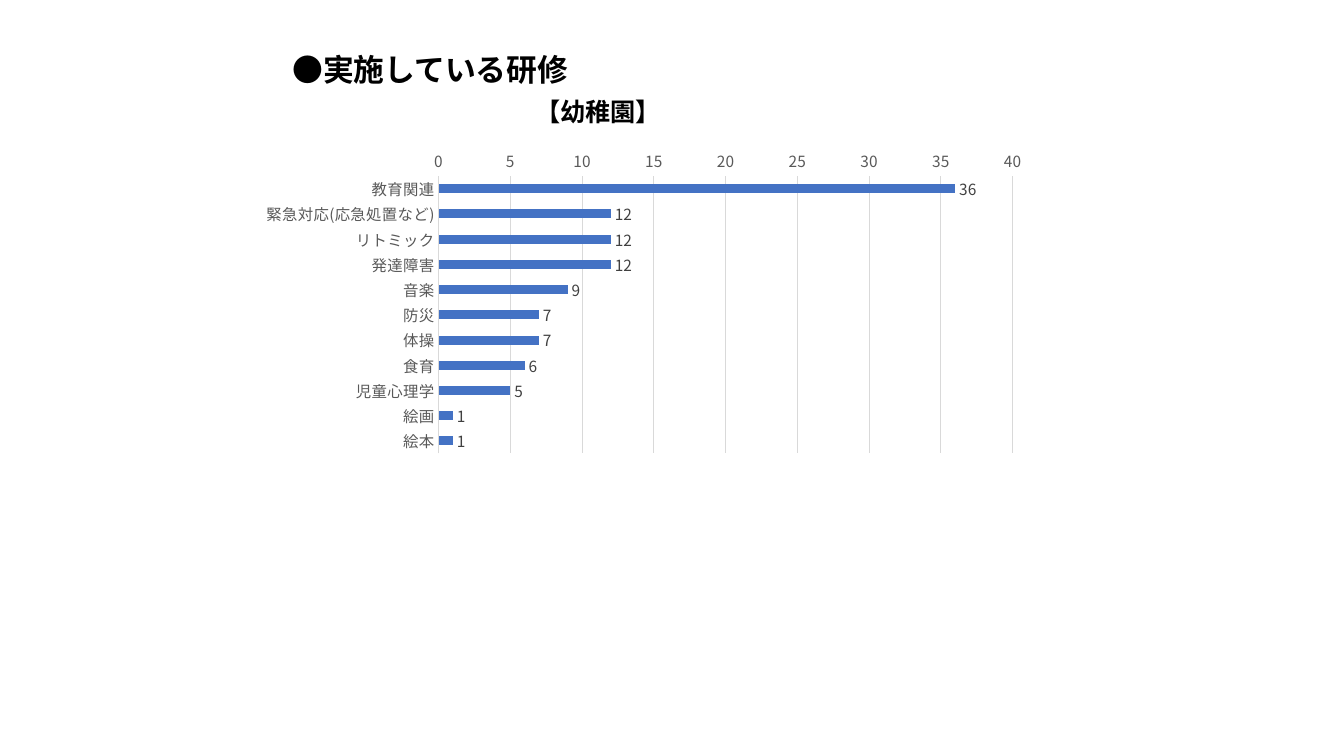
from lxml import etree
from pptx import Presentation, util as u
from pptx.chart.data import CategoryChartData
from pptx.dml.color import RGBColor
from pptx.enum import chart as ch, text
from pptx.oxml.ns import qn

# Content
HEADING = "●実施している研修"
SUBHEADING = "【幼稚園】"
TRAININGS = [
    ("教育関連", 36),
    ("緊急対応(応急処置など)", 12),
    ("リトミック", 12),
    ("発達障害", 12),
    ("音楽", 9),
    ("防災", 7),
    ("体操", 7),
    ("食育", 6),
    ("児童心理学", 5),
    ("絵画", 1),
    ("絵本", 1),
]

# Positions: left, top, width, height
HEADING_BOX = (2.8, 0.45, 10.5, 0.47)
SUBHEADING_BOX = (5.21, 0.91, 1.46, 0.4)
CHART_BOX = (2.41, 0.78, 8.51, 4.12)
PLOT_SHARE = {"x": 0.228, "y": 0.235, "w": 0.669, "h": 0.668}


class Theme:
    font = "Noto Sans CJK JP"
    ink, axis_text, label_text = "000000", "595959", "404040"
    bar, rule = "4472C4", "D9D9D9"
    heading, subheading, chart, axis = 22, 18, 10, 11


def inches(box):
    return [u.Inches(length) for length in box]


def style_font(font, size, color, bold=False):
    values = {"name": Theme.font, "size": u.Pt(size), "bold": bold}
    for name, value in values.items():
        setattr(font, name, value)
    font.color.rgb = RGBColor.from_string(color)


def style_line(line, color):
    line.color.rgb = RGBColor.from_string(color)
    line.width = u.Pt(0.75)


def write_text(box, words, size):
    frame = box.text_frame
    frame.text = words
    values = {
        "word_wrap": True,
        "vertical_anchor": text.MSO_ANCHOR.TOP,
        "auto_size": text.MSO_AUTO_SIZE.SHAPE_TO_FIT_TEXT,
    }
    for name, value in values.items():
        setattr(frame, name, value)
    para = frame.paragraphs[0]
    para.alignment = text.PP_ALIGN.LEFT
    style_font(para.runs[0].font, size, Theme.ink, bold=True)


def add_east_asian_font(root):
    for latin in list(root.iter(qn("a:latin"))):
        east_asian = etree.Element(qn("a:ea"), typeface=Theme.font)
        latin.addnext(east_asian)


def place_plot(chart):
    area = chart.element.find(".//" + qn("c:plotArea"))
    for old in area.findall(qn("c:layout")):
        area.remove(old)
    layout = etree.Element(qn("c:layout"))
    manual = etree.SubElement(layout, qn("c:manualLayout"))
    settings = {"layoutTarget": "inner", "xMode": "edge", "yMode": "edge", **PLOT_SHARE}
    for name, value in settings.items():
        etree.SubElement(manual, qn("c:" + name), val=str(value))
    area.insert(0, layout)


def add_training_chart(page):
    data = CategoryChartData()
    data.categories = [name for name, _ in TRAININGS]
    data.add_series("Series 1", [count for _, count in TRAININGS])
    chart = page.shapes.add_chart(
        ch.XL_CHART_TYPE.BAR_CLUSTERED, *inches(CHART_BOX), data
    ).chart
    chart.has_legend = chart.has_title = False
    style_font(chart.font, Theme.chart, Theme.ink)

    # Axes: first category on top
    for axis in (chart.category_axis, chart.value_axis):
        axis.major_tick_mark = axis.minor_tick_mark = ch.XL_TICK_MARK.NONE
        style_font(axis.tick_labels.font, Theme.axis, Theme.axis_text)
    chart.category_axis.reverse_order = True
    chart.category_axis.has_major_gridlines = False
    style_line(chart.category_axis.format.line, Theme.rule)
    scale = {"minimum_scale": 0, "maximum_scale": 40, "major_unit": 5}
    for name, value in scale.items():
        setattr(chart.value_axis, name, value)
    chart.value_axis.format.line.fill.background()
    style_line(chart.value_axis.major_gridlines.format.line, Theme.rule)

    # Bars and their values
    plot = chart.plots[0]
    plot.gap_width = 182
    plot.vary_by_categories = False
    bars = plot.series[0]
    bars.format.fill.solid()
    bars.format.fill.fore_color.rgb = RGBColor.from_string(Theme.bar)
    labels = bars.data_labels
    labels.show_value = True
    labels.position = ch.XL_LABEL_POSITION.OUTSIDE_END
    style_font(labels.font, Theme.axis, Theme.label_text)

    place_plot(chart)
    add_east_asian_font(chart.element)


def main():
    deck = Presentation()
    deck.slide_width, deck.slide_height = inches((13.33, 7.5))
    page = deck.slides.add_slide(deck.slide_layouts.get_by_name("Title Only"))

    # Headings
    title = page.shapes.title
    title.left, title.top, title.width, title.height = inches(HEADING_BOX)
    write_text(title, HEADING, Theme.heading)
    subtitle = page.shapes.add_textbox(*inches(SUBHEADING_BOX))
    write_text(subtitle, SUBHEADING, Theme.subheading)
    add_east_asian_font(page.element)

    # Chart
    add_training_chart(page)
    deck.save("out.pptx")


if __name__ == "__main__":
    main()
